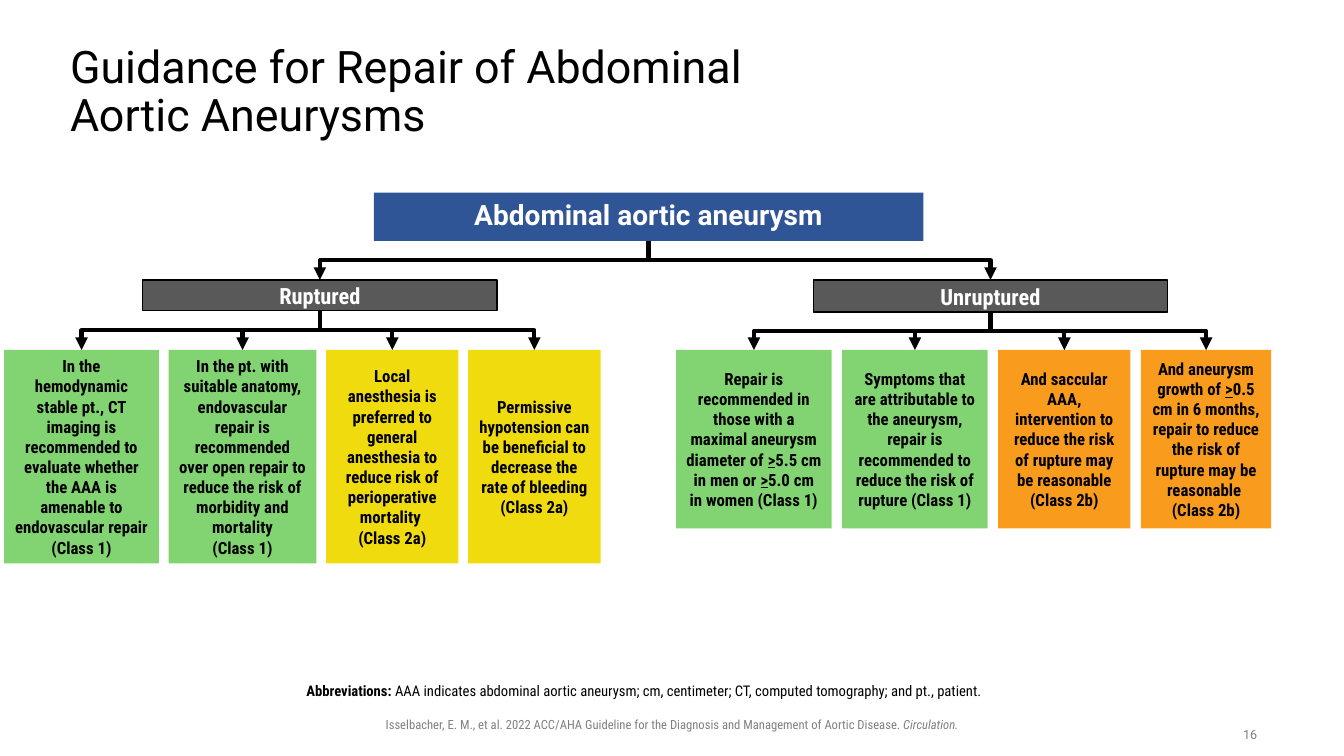
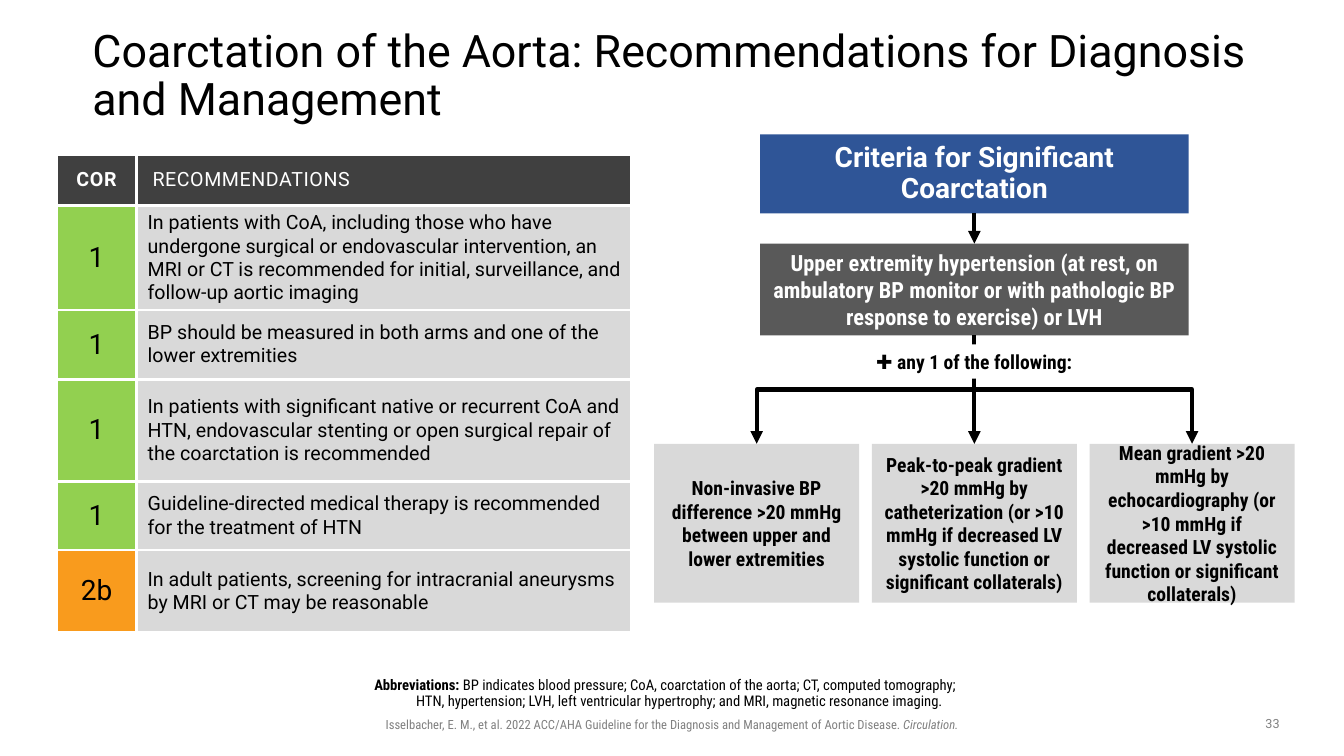
from dataclasses import dataclass, replace

from lxml.etree import SubElement
from pptx import Presentation
from pptx.dml.color import RGBColor
from pptx.enum.shapes import MSO_CONNECTOR as Connector, MSO_SHAPE as Preset
from pptx.enum.text import MSO_ANCHOR as Anchor, MSO_AUTO_SIZE as AutoSize, PP_ALIGN as Align
from pptx.oxml.ns import qn
from pptx.util import Pt

SANS = "Roboto"
CONDENSED = "Roboto Condensed"
BLACK = "000000"
WHITE = "FFFFFF"
BLUE = "2F5597"
DARK_GRAY = "595959"
HEADER_GRAY = "404040"
LIGHT_GRAY = "D9D9D9"
FOOTER_GRAY = "808080"
GREEN = "82D472"
TABLE_GREEN = "92D050"
YELLOW = "F0DB0E"
ORANGE = "F99B1D"

NO_MARGINS = (0, 0, 0, 0)
BOX_MARGINS = (7.2, 3.6, 7.2, 3.6)
NOTE_MARGINS = (0, 3.6, 7.2, 3.6)


@dataclass
class Style:
    font: str
    size: float
    color: str = BLACK
    bold: bool = False
    align: Align = Align.CENTER
    line_spacing: float = 1.0


TITLE = Style(SANS, 32, align=Align.LEFT, line_spacing=0.9)
HEADING = Style(SANS, 20, WHITE, True, line_spacing=0.9)
BRANCH = Style(CONDENSED, 16, WHITE, True)
LEAF = Style(CONDENSED, 12, bold=True)
CRITERION = replace(LEAF, size=14)
NOTE = Style(CONDENSED, 10.5, line_spacing=0.9)
CITATION = Style(CONDENSED, 9, FOOTER_GRAY)
NUMBER = replace(CITATION, font=SANS)
GRADE = Style(SANS, 20)
ADVICE = Style(SANS, 14, align=Align.LEFT)
COR_HEAD = Style(SANS, 14, WHITE, True)
ADVICE_HEAD = replace(ADVICE, color=WHITE)


def color(hex_string):
    return RGBColor.from_string(hex_string)


def add_runs(paragraph, parts):
    for part in parts:
        text, emphasis = (part, None) if isinstance(part, str) else part
        for index, line in enumerate(text.split("\n")):
            if index:
                paragraph.add_line_break()
            run = paragraph.add_run()
            run.text = line
            if emphasis:
                setattr(run.font, emphasis, True)


def write(frame, paragraphs, style):
    frame.word_wrap = True
    for index, content in enumerate(paragraphs):
        paragraph = frame.add_paragraph() if index else frame.paragraphs[0]
        add_runs(paragraph, [content] if isinstance(content, str) else content)
        paragraph.alignment = style.align
        paragraph.line_spacing = style.line_spacing
        font = paragraph.font
        font.name = style.font
        font.size = Pt(style.size)
        font.bold = style.bold
        font.color.rgb = color(style.color)


def set_margins(target, margins):
    sides = ("margin_left", "margin_top", "margin_right", "margin_bottom")
    for side, margin in zip(sides, margins):
        setattr(target, side, Pt(margin))


def in_points(bounds):
    return [Pt(value) for value in bounds]


def add_text(slide, bounds, paragraphs, style, margins=BOX_MARGINS):
    shape = slide.shapes.add_textbox(*in_points(bounds))
    set_margins(shape.text_frame, margins)
    write(shape.text_frame, paragraphs, style)
    return shape


def add_box(slide, bounds, fill, paragraphs, style, margins=BOX_MARGINS, outlined=False):
    shape = slide.shapes.add_shape(Preset.RECTANGLE, *in_points(bounds))
    shape.shadow.inherit = False
    shape.fill.solid()
    shape.fill.fore_color.rgb = color(fill)
    if outlined:
        shape.line.color.rgb = color(BLACK)
        shape.line.width = Pt(1)
    else:
        shape.line.fill.background()
    frame = shape.text_frame
    frame.vertical_anchor = Anchor.MIDDLE
    set_margins(frame, margins)
    write(frame, paragraphs, style)
    return shape


def add_arrow(slide, kind, parent, child):
    connector = slide.shapes.add_connector(kind, 0, 0, 0, 0)
    connector.begin_connect(parent, 2)
    connector.end_connect(child, 0)
    connector.line.width = Pt(3)
    connector.line.color.rgb = color(BLACK)
    properties = connector._element.spPr
    SubElement(properties.find(qn("a:ln")), qn("a:tailEnd"), type="triangle")
    SubElement(properties, qn("a:effectLst"))
    return connector


def add_elbow(slide, parent, child):
    connector = add_arrow(slide, Connector.ELBOW, parent, child)
    start_x = parent.left + parent.width // 2
    start_y = parent.top + parent.height
    end_x = child.left + child.width // 2
    length, spread = child.top - start_y, abs(end_x - start_x)
    connector.left = (start_x + end_x - length) // 2
    connector.top = (start_y + child.top - spread) // 2
    connector.width, connector.height = length, spread
    to_right = end_x > start_x
    transform = connector._element.spPr.find(qn("a:xfrm"))
    transform.set("rot", "16200000" if to_right else "5400000")
    transform.set("flipH", "1" if to_right else "0")
    transform.set("flipV", "0")


def add_branch(slide, root, bounds, text, leaf_left, leaf_height, gap, leaves):
    branch = add_box(slide, bounds, DARK_GRAY, [text], BRANCH, outlined=True)
    add_elbow(slide, root, branch)
    for width, fill, paragraphs in leaves:
        leaf = add_box(slide, (leaf_left, 250, width, leaf_height), fill, paragraphs, LEAF)
        add_elbow(slide, branch, leaf)
        leaf_left += width + gap


def add_note(slide, bounds, text):
    shape = add_text(slide, bounds, [[("Abbreviations: ", "bold"), text]], NOTE, NOTE_MARGINS)
    properties = shape.text_frame.paragraphs[0]._p.get_or_add_pPr()
    properties.set("marL", str(Pt(18)))
    properties.set("indent", str(-Pt(18)))


def start_slide(presentation, title, title_bounds, number, number_corner):
    slide = presentation.slides.add_slide(presentation.slide_layouts[5])
    shape = slide.shapes.title
    shape.left, shape.top, shape.width, shape.height = in_points(title_bounds)
    frame = shape.text_frame
    frame.auto_size = AutoSize.NONE
    frame.vertical_anchor = Anchor.MIDDLE
    set_margins(frame, NO_MARGINS)
    write(frame, [title], TITLE)
    citation = ("Isselbacher, E. M., et al. 2022 ACC/AHA Guideline for the "
                "Diagnosis and Management of Aortic Disease. ")
    add_text(slide, (130.5, 508.5, 699, 18), [[citation, ("Circulation.", "italic")]], CITATION)
    add_text(slide, (*number_corner, 30, 18.5), [number], NUMBER)
    return slide


def add_borders(cell):
    properties = cell._tc.get_or_add_tcPr()
    for index, side in enumerate(("a:lnL", "a:lnR", "a:lnT", "a:lnB")):
        line = SubElement(properties, qn(side), w=str(Pt(2.25)))
        fill = SubElement(line, qn("a:solidFill"))
        SubElement(fill, qn("a:srgbClr"), val=WHITE)
        properties.insert(index, line)


def format_cell(cell, text, style, fill, margins):
    cell.fill.solid()
    cell.fill.fore_color.rgb = color(fill)
    cell.vertical_anchor = Anchor.MIDDLE
    set_margins(cell, margins)
    write(cell.text_frame, [text], style)
    add_borders(cell)


def add_recommendations(slide, corner, widths, heights, rows):
    bounds = (*corner, sum(widths), sum(heights))
    table = slide.shapes.add_table(len(heights), len(widths), *in_points(bounds)).table
    table.first_row = table.horz_banding = False
    for column, width in zip(table.columns, widths):
        column.width = Pt(width)
    for row, height in zip(table.rows, heights):
        row.height = Pt(height)
    format_cell(table.cell(0, 0), "COR", COR_HEAD, HEADER_GRAY, BOX_MARGINS)
    format_cell(table.cell(0, 1), "RECOMMENDATIONS", ADVICE_HEAD, HEADER_GRAY, (11.5, 3.6, 7.2, 3.6))
    for column, tracking in enumerate(("50", "40")):
        run = table.cell(0, column).text_frame.paragraphs[0].runs[0]
        run._r.get_or_add_rPr().set("spc", tracking)
    for index, (grade, fill, advice) in enumerate(rows, 1):
        format_cell(table.cell(index, 0), grade, GRADE, fill, (3.6,) * 4)
        format_cell(table.cell(index, 1), advice, ADVICE, LIGHT_GRAY, (8, 3.6, 3.6, 3.6))


def build_repair(presentation):
    slide = start_slide(presentation, "Guidance for Repair of Abdominal Aortic Aneurysms",
                        (50, 36, 490, 60.5), "16", (878, 515.5))
    root = add_box(slide, (267, 137.5, 392.5, 34.5), BLUE,
                   ["Abdominal aortic aneurysm"], HEADING, NO_MARGINS)
    at_least = (">", "underline")
    add_branch(slide, root, (102, 200, 253, 22), "Ruptured", 3, 152.5, 7, [
        (110.5, GREEN, ["In the hemodynamic stable pt., CT imaging is recommended to evaluate "
                        "whether the AAA is amenable to endovascular repair (Class 1)"]),
        (105.5, GREEN, ["In the pt. with suitable anatomy, endovascular repair is recommended over "
                        "open repair to reduce the risk of morbidity and mortality", "(Class 1)"]),
        (94.5, YELLOW, ["Local anesthesia is preferred to general anesthesia to reduce risk of "
                        "perioperative mortality \n(Class 2a)"]),
        (94.5, YELLOW, ["Permissive hypotension can be beneficial to decrease the rate of "
                        "bleeding (Class 2a)"]),
    ])
    add_branch(slide, root, (581, 200, 253, 23), "Unruptured", 483, 127.5, 7.5, [
        (111, GREEN, [["Repair is recommended in those with a maximal aneurysm diameter of ",
                       at_least, "5.5 cm in men or ", at_least, "5.0 cm in women (Class 1)"]]),
        (104, GREEN, ["Symptoms that are attributable to the aneurysm, repair is recommended to "
                      "reduce the risk of rupture (Class 1)"]),
        (94.5, ORANGE, ["And saccular AAA, intervention to reduce the risk of rupture may be "
                        "reasonable (Class 2b)"]),
        (93, ORANGE, [["And aneurysm growth of ", at_least, "0.5 cm in 6 months, repair to reduce "
                       "the risk of rupture may be reasonable "], "(Class 2b)"]),
    ])
    add_note(slide, (134, 485, 659.5, 19), "AAA indicates abdominal aortic aneurysm; cm, "
             "centimeter; CT, computed tomography; and pt., patient.")


def build_coarctation(presentation):
    slide = start_slide(
        presentation, "Coarctation of the Aorta: Recommendations for Diagnosis and Management",
        (66, 29, 828, 52), "33", (894, 507.5))
    add_recommendations(slide, (40.5, 110.5), (57, 353.5), (36.5, 73.5, 49.5, 73, 49, 59), [
        ("1", TABLE_GREEN, "In patients with CoA, including those who have undergone surgical or "
         "endovascular intervention, an MRI or CT is recommended for initial, surveillance, and "
         "follow-up aortic imaging"),
        ("1", TABLE_GREEN, "BP should be measured in both arms and one of the lower extremities"),
        ("1", TABLE_GREEN, "In patients with significant native or recurrent CoA and HTN, "
         "endovascular stenting or open surgical repair of the coarctation is recommended"),
        ("1", TABLE_GREEN, "Guideline-directed medical therapy is recommended for the treatment of HTN"),
        ("2b", ORANGE, "In adult patients, screening for intracranial aneurysms by MRI or CT "
         "may be reasonable"),
    ])
    center = 696
    heading = add_box(slide, (center - 153, 96, 306, 56.5), BLUE,
                      ["Criteria for Significant", "Coarctation"], HEADING, NO_MARGINS)
    hypertension = add_box(slide, (center - 153, 174, 306, 65.5), DARK_GRAY, [
        "Upper extremity hypertension (at rest, on ambulatory BP monitor or with pathologic BP "
        "response to exercise) or LVH"], BRANCH)
    add_arrow(slide, Connector.STRAIGHT, heading, hypertension)
    criteria = [
        "Non-invasive BP difference >20 mmHg between upper and lower extremities",
        "Peak-to-peak gradient >20 mmHg by catheterization (or >10 mmHg if decreased LV systolic "
        "function or significant collaterals)",
        "Mean gradient >20 mmHg by echocardiography (or >10 mmHg if decreased LV systolic "
        "function or significant collaterals)",
    ]
    left, middle, right = [
        add_box(slide, (center + 155.5 * (index - 1) - 73.25, 317, 146.5, 113.5),
                LIGHT_GRAY, [text], CRITERION)
        for index, text in enumerate(criteria)
    ]
    add_elbow(slide, hypertension, left)
    add_elbow(slide, hypertension, right)
    label = add_box(slide, (center - 79, 246, 158, 24.5), WHITE,
                    ["✚ any 1 of the following:"], CRITERION)
    add_arrow(slide, Connector.STRAIGHT, label, middle)
    add_note(slide, (66, 480.5, 828, 21.5), "BP indicates blood pressure; CoA, coarctation of the "
             "aorta; CT, computed tomography; \nHTN, hypertension; LVH, left ventricular "
             "hypertrophy; and MRI, magnetic resonance imaging.")


def main():
    presentation = Presentation()
    presentation.slide_width, presentation.slide_height = Pt(960), Pt(540)
    build_repair(presentation)
    build_coarctation(presentation)
    presentation.save("out.pptx")


if __name__ == "__main__":
    main()
